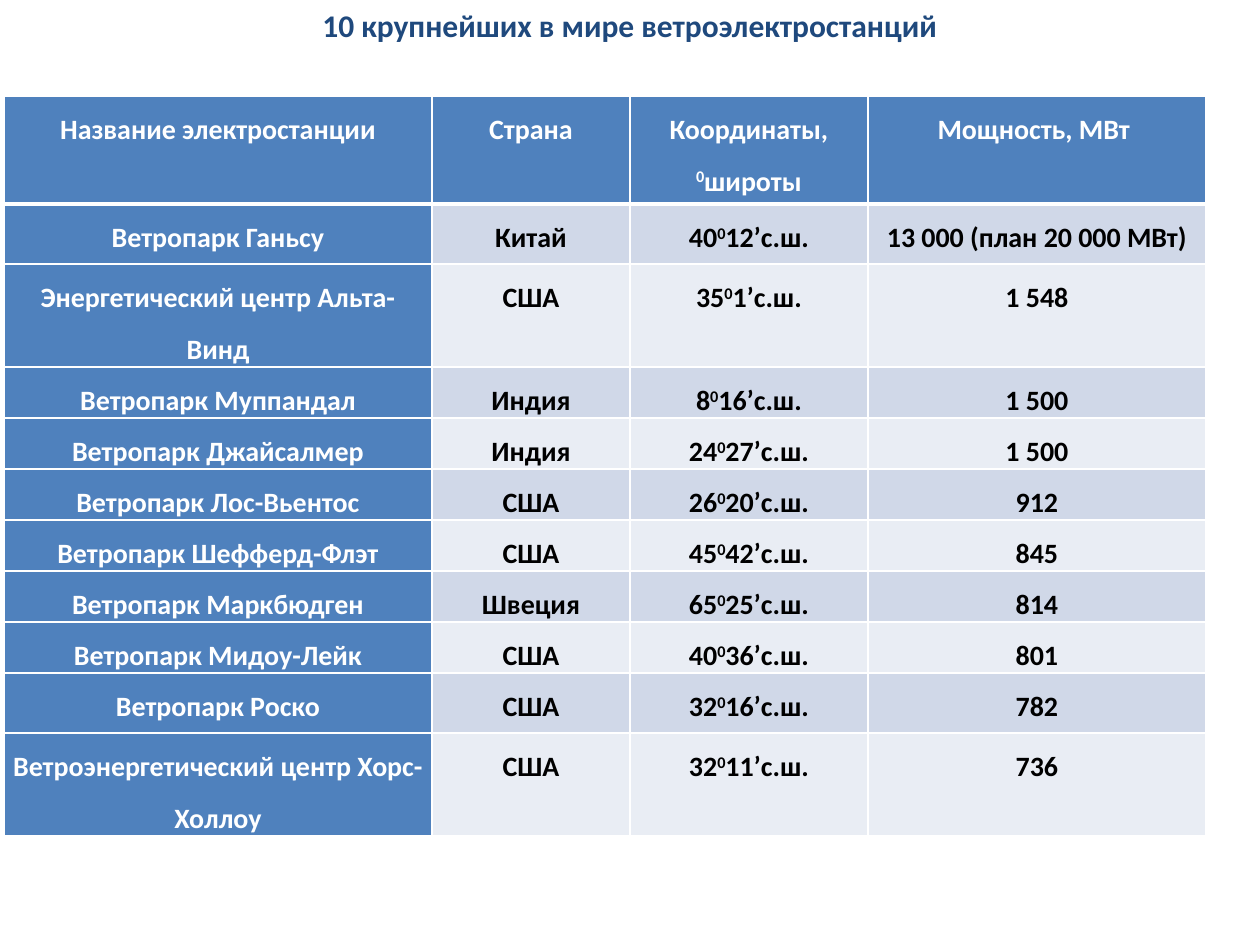
from lxml import etree
from pptx import Presentation
from pptx.dml.color import RGBColor
from pptx.enum.text import MSO_ANCHOR, PP_ALIGN
from pptx.oxml.ns import qn
from pptx.util import Emu, Pt

PX = 914400 // 126
CENTER = PP_ALIGN.CENTER
MIDDLE = MSO_ANCHOR.MIDDLE

WHITE = RGBColor(0xFF, 0xFF, 0xFF)
BLACK = RGBColor(0x00, 0x00, 0x00)
NAVY = RGBColor(0x1F, 0x49, 0x7D)
BLUE = RGBColor(0x4F, 0x81, 0xBD)
DARK_BAND = RGBColor(0xD0, 0xD8, 0xE8)
LIGHT_BAND = RGBColor(0xE9, 0xED, 0xF4)

HEADINGS = ("Название электростанции", "Страна", "Координаты, ^0^широты", "Мощность, МВт ")
WIND_FARMS = (
    ("Ветропарк Ганьсу", "Китай", "40^0^12’с.ш.", "13 000 (план 20 000 МВт)"),
    ("Энергетический центр Альта-Винд", "США", "35^0^1’с.ш.", "1 548"),
    ("Ветропарк Муппандал", "Индия", "8^0^16’с.ш.", "1 500"),
    ("Ветропарк Джайсалмер", "Индия", "24^0^27’с.ш.", "1 500"),
    ("Ветропарк Лос-Вьентос", "США", "26^0^20’с.ш.", "912"),
    ("Ветропарк Шефферд-Флэт", "США", "45^0^42’с.ш.", "845"),
    ("Ветропарк Маркбюдген", "Швеция", "65^0^25’с.ш.", "814"),
    ("Ветропарк Мидоу-Лейк", "США", "40^0^36’с.ш.", "801"),
    ("Ветропарк Роско", "США", "32^0^16’с.ш.", "782"),
    ("Ветроэнергетический центр Хорс-Холлоу", "США", "32^0^11’с.ш.", "736"),
)
COLUMN_WIDTHS = (428, 198, 238, 338)
ROW_HEIGHTS = (108, 60, 103) + (51,) * 6 + (60, 103)


def px(length):
    return Emu(length * PX)


def write_text(frame, text, *, font, size, color, spacing=1.0):
    paragraph = frame.paragraphs[0]
    paragraph.alignment = CENTER
    paragraph.line_spacing = spacing
    for index, part in enumerate(text.split("^")):
        run = paragraph.add_run()
        run.text = part
        run.font.name = font
        run.font.size = Pt(size)
        run.font.bold = True
        run.font.color.rgb = color
        if index % 2:
            run._r.get_or_add_rPr().set("baseline", "30000")


def set_borders(cell, top, bottom):
    properties = cell._tc.get_or_add_tcPr()
    for side, width in (("L", 1), ("R", 1), ("T", top), ("B", bottom)):
        line = etree.SubElement(properties, qn(f"a:ln{side}"), w=str(Pt(width)))
        fill = etree.SubElement(line, qn("a:solidFill"))
        etree.SubElement(fill, qn("a:srgbClr"), val=str(WHITE))


class SlideBuilder:
    def __init__(self, slide, font):
        self.slide = slide
        self.font = font

    def title(self, text, left, top, width, height):
        box = self.slide.shapes.add_textbox(px(left), px(top), px(width), px(height))
        frame = box.text_frame
        frame.word_wrap = True
        frame.vertical_anchor = MIDDLE
        write_text(frame, text, font=self.font, size=18, color=NAVY)

    def table(self, rows, left, top, widths, heights):
        table = self.slide.shapes.add_table(
            len(rows), len(widths), px(left), px(top), px(sum(widths)), px(sum(heights))
        ).table
        table.horz_banding = False
        for column, width in zip(table.columns, widths):
            column.width = px(width)
        for row, height in zip(table.rows, heights):
            row.height = px(height)
        for row_index, values in enumerate(rows):
            for column_index, value in enumerate(values):
                self.cell(table.cell(row_index, column_index), value, row_index, column_index)

    def cell(self, cell, text, row, column):
        heading = row == 0 or column == 0
        cell.margin_left = cell.margin_right = px(9)
        cell.margin_top = cell.margin_bottom = 0
        set_borders(cell, top=3 if row == 1 else 1, bottom=3 if row == 0 else 1)
        cell.fill.solid()
        band = DARK_BAND if row % 2 else LIGHT_BAND
        cell.fill.fore_color.rgb = BLUE if heading else band
        write_text(cell.text_frame, text, font=self.font, size=16,
                   color=WHITE if heading else BLACK, spacing=1.5)


def main():
    presentation = Presentation()
    presentation.slide_width = px(1260)
    presentation.slide_height = px(945)
    slide = presentation.slides.add_slide(presentation.slide_layouts[6])
    builder = SlideBuilder(slide, "Calibri")
    builder.title("10 крупнейших в мире ветроэлектростанций", 63, 1, 1134, 48)
    builder.table((HEADINGS,) + WIND_FARMS, 4, 96, COLUMN_WIDTHS, ROW_HEIGHTS)
    presentation.save("out.pptx")


if __name__ == "__main__":
    main()
